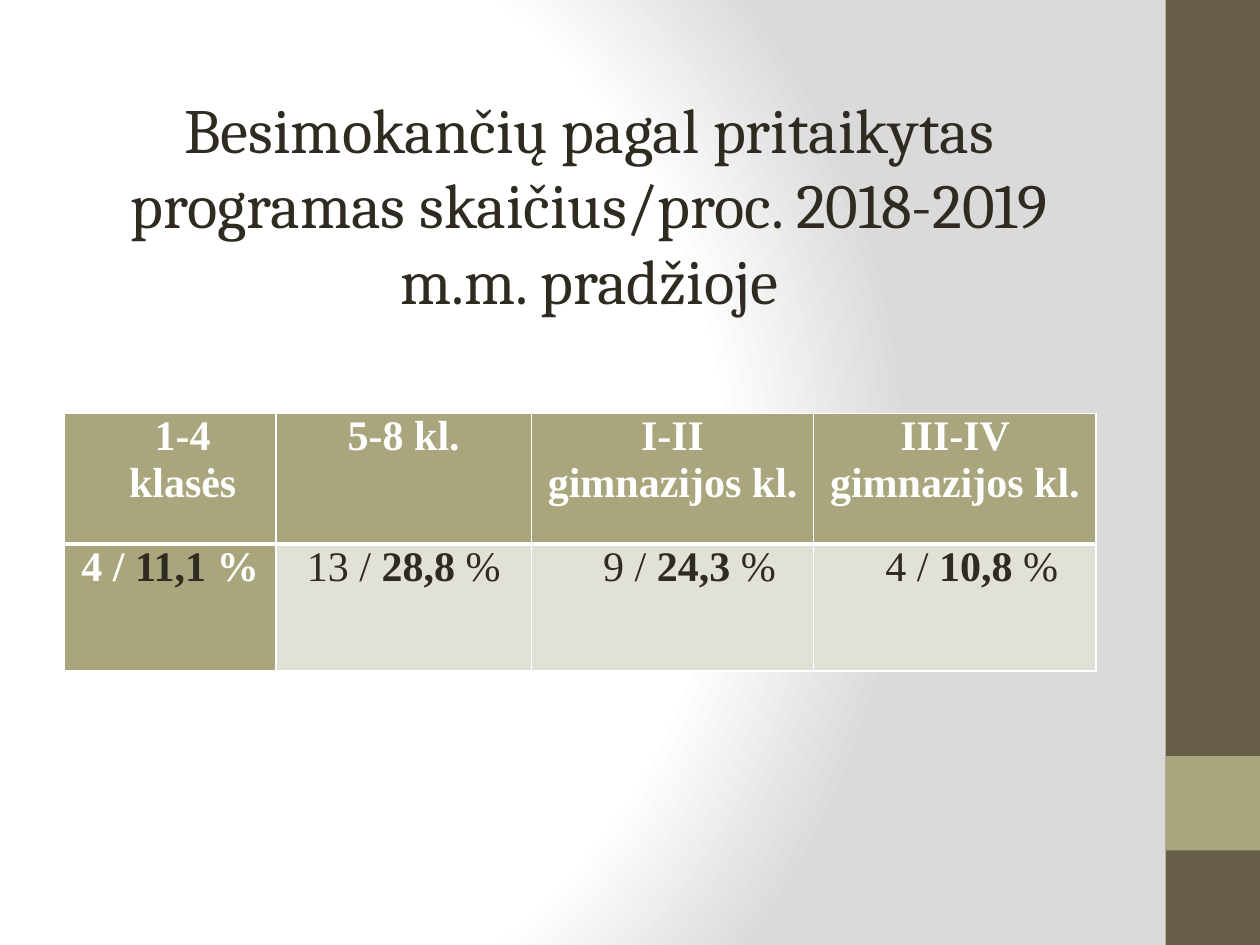
from dataclasses import dataclass

from lxml.etree import SubElement
from pptx import Presentation
from pptx.dml.color import RGBColor
from pptx.enum.shapes import MSO_SHAPE
from pptx.enum.text import MSO_ANCHOR, MSO_AUTO_SIZE, PP_ALIGN
from pptx.oxml import parse_xml
from pptx.oxml.ns import nsdecls, qn
from pptx.util import Pt


@dataclass(frozen=True)
class Theme:
    ink: str = "2F2B20"
    white: str = "FFFFFF"
    grey: str = "DADADA"
    brown: str = "675E47"
    olive: str = "A9A57C"
    pale: str = "E2E1D7"
    title_font: str = "Cambria"
    table_font: str = "Times New Roman"
    title_size: int = 36
    table_size: int = 24


theme = Theme()


def rgb(value):
    return RGBColor.from_string(value)


def set_borders(cell, bottom_width):
    """Draw white lines round a cell; they must precede its fill in the XML."""
    properties = cell._tc.get_or_add_tcPr()
    for side, width in (("L", 1), ("R", 1), ("T", 1), ("B", bottom_width)):
        line = SubElement(properties, qn(f"a:ln{side}"), w=str(Pt(width)))
        fill = SubElement(line, qn("a:solidFill"))
        SubElement(fill, qn("a:srgbClr"), val=theme.white)


deck = Presentation()
deck.slide_width, deck.slide_height = Pt(720), Pt(540)
page = deck.slides.add_slide(deck.slide_layouts[5])

# Background: white glow from the left fading to grey
page.background.fill.solid()
background = page._element.find(f".//{qn('p:bgPr')}")
stops = "".join(
    f'<a:gs pos="{place * 1000}"><a:srgbClr val="{color}"/></a:gs>'
    for place, color in ((0, theme.white), (75, theme.white), (100, theme.grey))
)
background.replace(background[0], parse_xml(
    f'<a:gradFill {nsdecls("a")} rotWithShape="1"><a:gsLst>{stops}</a:gsLst>'
    '<a:path path="circle">'
    '<a:fillToRect l="20000" t="50000" r="100000" b="50000"/>'
    '</a:path></a:gradFill>'
))

# Side band with its accent square
for top, height, color in ((0, 540, theme.brown), (432, 54, theme.olive)):
    band = page.shapes.add_shape(
        MSO_SHAPE.RECTANGLE, Pt(666), Pt(top), Pt(54), Pt(height))
    band.shadow.inherit = False
    band.fill.solid()
    band.fill.fore_color.rgb = rgb(color)
    band.line.fill.background()

# Title
title = page.shapes.title
title.left, title.top, title.width, title.height = Pt(36.7), Pt(71.3), Pt(600), Pt(90)
frame = title.text_frame
frame.text = ("Besimokančių pagal pritaikytas programas skaičius/proc. "
              "2018-2019 m.m. pradžioje")
frame.word_wrap = True
frame.auto_size = MSO_AUTO_SIZE.NONE
frame.vertical_anchor = MSO_ANCHOR.MIDDLE
para = frame.paragraphs[0]
para.alignment = PP_ALIGN.CENTER
para.font.name = theme.title_font
para.font.size = Pt(theme.title_size)
para.font.color.rgb = rgb(theme.ink)

# Table: pupils on adapted programmes, as count / share
headings = ["1-4 klasės", "5-8 kl.", "I-II gimnazijos kl.", "III-IV gimnazijos kl."]
results = [("4", "11,1"), ("13", "28,8"), ("9", "24,3"), ("4", "10,8")]
rows = [
    [[heading] for heading in headings],
    [[f"{count} / ", f"{share} ", "%"] for count, share in results],
]
column_widths = [121, 146, 161.3, 161.3]
row_heights = [74.6, 72.7]
indents = {(0, 0): 14.4, (1, 2): 36, (1, 3): 36}

table = page.shapes.add_table(
    len(rows), len(headings), Pt(36.7), Pt(236.2),
    Pt(sum(column_widths)), Pt(sum(row_heights))).table
for column, width in zip(table.columns, column_widths):
    column.width = Pt(width)
for row, height in zip(table.rows, row_heights):
    row.height = Pt(height)

for r, row in enumerate(rows):
    for c, parts in enumerate(row):
        cell = table.cell(r, c)
        strong = r == 0 or c == 0
        set_borders(cell, 3 if r == 0 else 1)
        cell.fill.solid()
        cell.fill.fore_color.rgb = rgb(theme.olive if strong else theme.pale)
        cell.margin_left = cell.margin_right = Pt(5)
        cell.margin_top = cell.margin_bottom = Pt(0)

        para = cell.text_frame.paragraphs[0]
        para.alignment = PP_ALIGN.LEFT if r == 1 and c > 1 else PP_ALIGN.CENTER
        if (r, c) in indents:
            para._p.get_or_add_pPr().set("marL", str(Pt(indents[r, c])))
        para.font.name = theme.table_font
        para.font.size = Pt(theme.table_size)
        for i, part in enumerate(parts):
            is_share = i == 1
            span = para.add_run()
            span.text = part
            span.font.bold = strong or is_share
            span.font.color.rgb = rgb(
                theme.white if strong and not is_share else theme.ink)

deck.save("out.pptx")
